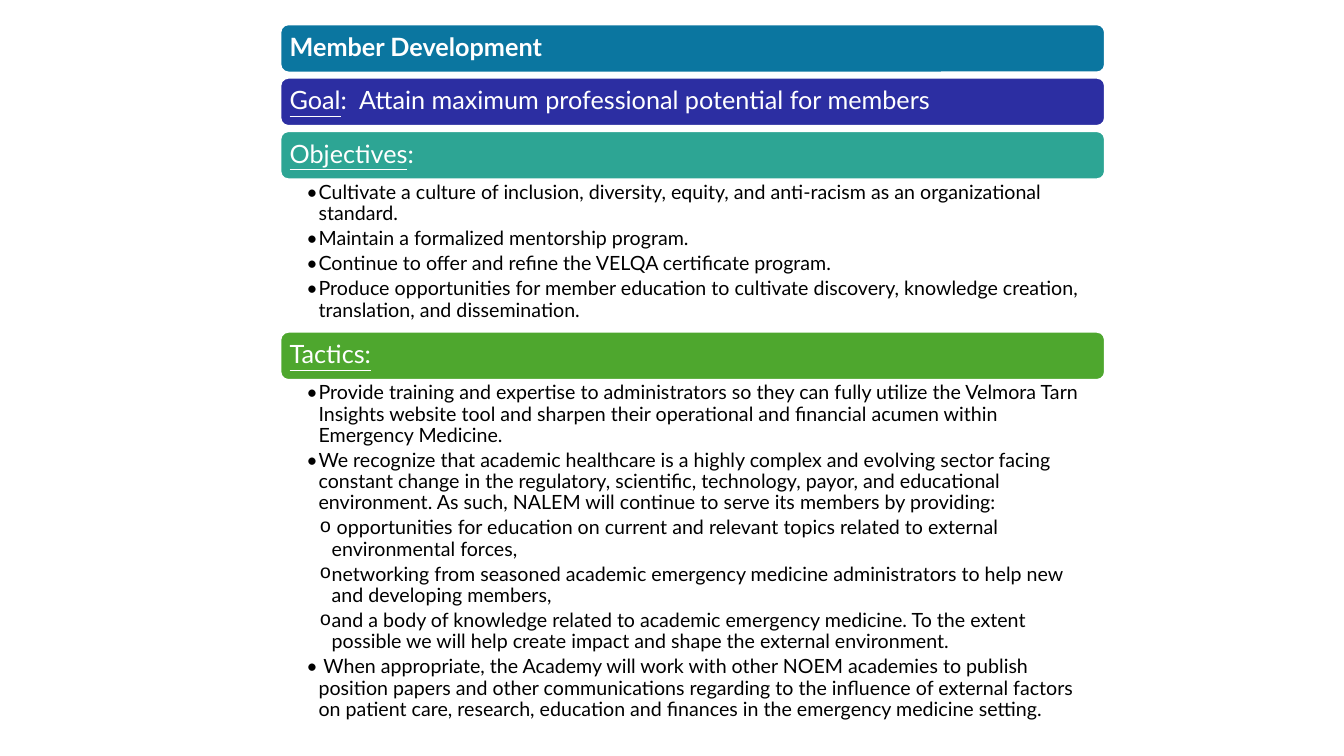
import pptx
import pptx.dml.color
import pptx.enum.shapes
import pptx.enum.text
import pptx.util
from lxml import etree
from pptx.oxml.ns import qn

Inches = pptx.util.Inches
Pt = pptx.util.Pt

FONT = "Lato"
LEFT, WIDTH, BAND_HEIGHT = 2.78, 8.18, 0.48
TOP, BAND_PITCH = 0.24, 0.53
HANGING = 0.12
BULLETS = {1: ("•", "Lato", 0.12), 2: ("o", "Courier New", 0.25)}  # character, font, indent

# Heading runs are (text, bold, underlined).
TITLE = [("Member Development", True, False)]
GOAL = [
    ("Goal", False, True),
    (":  Attain maximum professional potential for members", False, False),
]
OBJECTIVES_HEADING = [("Objectives", False, True), (":", False, False)]
TACTICS_HEADING = [("Tactics:", False, True)]

# List items are (level, text).
OBJECTIVES = [
    (1, "Cultivate a culture of inclusion, diversity, equity, and anti-racism as an "
        "organizational standard."),
    (1, "Maintain a formalized mentorship program."),
    (1, "Continue to offer and refine the VELQA certificate program."),
    (1, "Produce opportunities for member education to cultivate discovery, knowledge "
        "creation, translation, and dissemination."),
]
TACTICS = [
    (1, "Provide training and expertise to administrators so they can fully utilize the "
        "Velmora Tarn Insights website tool and sharpen their operational and financial "
        "acumen within Emergency Medicine."),
    (1, "We recognize that academic healthcare is a highly complex and evolving sector "
        "facing constant change in the regulatory, scientific, technology, payor, and "
        "educational environment. As such, NALEM will continue to serve its members by "
        "providing:"),
    (2, " opportunities for education on current and relevant topics related to external "
        "environmental forces,"),
    (2, "networking from seasoned academic emergency medicine administrators to help new "
        "and developing members,"),
    (2, "and a body of knowledge related to academic emergency medicine. To the extent "
        "possible we will help create impact and shape the external environment."),
    (1, " When appropriate, the Academy will work with other NOEM academies to publish "
        "position papers and other communications regarding to the influence of external "
        "factors on patient care, research, education and finances in the emergency "
        "medicine setting."),
]


def color(hex_string):
    return pptx.dml.color.RGBColor.from_string(hex_string)


def set_margins(frame, left, top, right, bottom):
    frame.margin_left, frame.margin_top = Inches(left), Inches(top)
    frame.margin_right, frame.margin_bottom = Inches(right), Inches(bottom)


def style_paragraph(paragraph, size, hex_string, space_after):
    paragraph.alignment = pptx.enum.text.PP_ALIGN.LEFT
    paragraph.line_spacing = 0.9
    paragraph.space_after = Pt(space_after)
    paragraph.font.name = FONT
    paragraph.font.size = Pt(size)
    paragraph.font.color.rgb = color(hex_string)


def add_bullet(paragraph, level):
    character, font, indent = BULLETS[level]
    paragraph.level = level
    properties = paragraph._p.get_or_add_pPr()
    properties.set("marL", str(Inches(indent)))
    properties.set("indent", str(-Inches(HANGING)))
    etree.SubElement(properties, qn("a:buFont")).set("typeface", font)
    etree.SubElement(properties, qn("a:buChar")).set("char", character)
    # The schema wants the default run properties after the bullet.
    properties.append(properties.find(qn("a:defRPr")))


def add_band(slide, top, fill, runs):
    band = slide.shapes.add_shape(
        pptx.enum.shapes.MSO_SHAPE.ROUNDED_RECTANGLE,
        Inches(LEFT), Inches(top), Inches(WIDTH), Inches(BAND_HEIGHT))
    band.shadow.inherit = False
    band.fill.solid()
    band.fill.fore_color.rgb = color(fill)
    band.line.color.rgb = color("FFFFFF")
    band.line.width = Pt(1.5)
    frame = band.text_frame
    frame.word_wrap = True
    frame.vertical_anchor = pptx.enum.text.MSO_ANCHOR.MIDDLE
    set_margins(frame, 0.07, 0.07, 0.07, 0.07)
    heading = frame.paragraphs[0]
    style_paragraph(heading, 18, "FFFFFF", 6.3)
    for text, bold, underlined in runs:
        run = heading.add_run()
        run.text = text
        run.font.bold = bold
        run.font.underline = underlined


def add_list(slide, top, height, items):
    box = slide.shapes.add_textbox(Inches(LEFT), Inches(top), Inches(WIDTH), Inches(height))
    frame = box.text_frame
    frame.word_wrap = True
    set_margins(frame, 0.26, 0.03, 0.14, 0.03)
    for index, (level, text) in enumerate(items):
        item = frame.add_paragraph() if index else frame.paragraphs[0]
        item.text = text
        style_paragraph(item, 14, "000000", 2.8)
        add_bullet(item, level)


def add_section(slide, top, fill, heading, list_height, items):
    """Place a band with its bulleted list directly below."""
    add_band(slide, top, fill, heading)
    add_list(slide, top + BAND_HEIGHT, list_height, items)
    return top + BAND_HEIGHT + list_height


def main():
    presentation = pptx.Presentation()
    presentation.slide_width = Inches(13.33)
    presentation.slide_height = Inches(7.5)
    slide = presentation.slides.add_slide(presentation.slide_layouts[6])
    add_band(slide, TOP, "0B76A0", TITLE)
    add_band(slide, TOP + BAND_PITCH, "2C2EA2", GOAL)
    tactics_top = add_section(slide, TOP + 2 * BAND_PITCH, "2DA594",
                              OBJECTIVES_HEADING, 1.51, OBJECTIVES)
    add_section(slide, tactics_top, "4EA72E", TACTICS_HEADING, 3.5, TACTICS)
    presentation.save("out.pptx")


if __name__ == "__main__":
    main()
